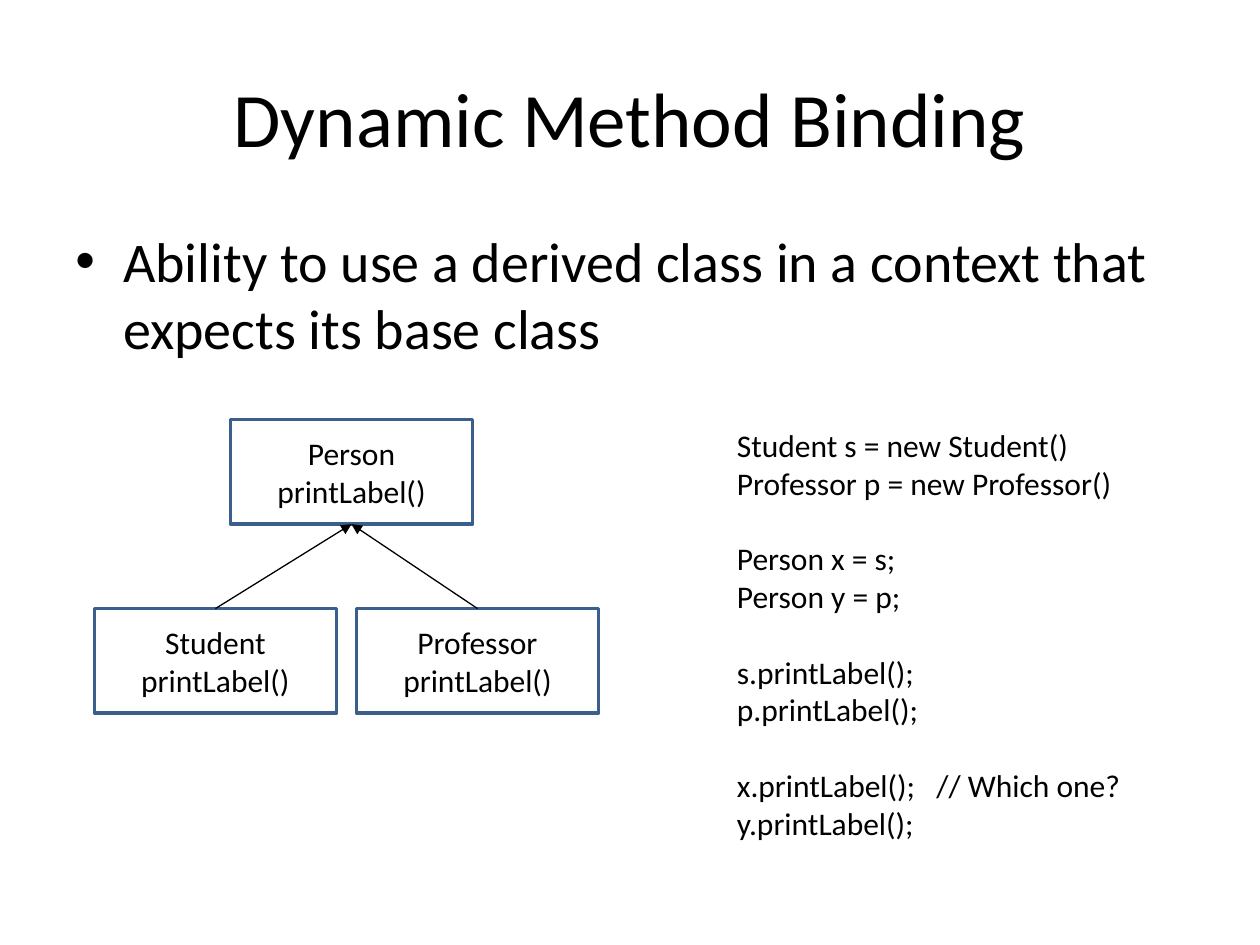
from lxml import etree
from pptx import Presentation
from pptx.dml.color import RGBColor
from pptx.enum.shapes import MSO_CONNECTOR, MSO_SHAPE
from pptx.enum.text import MSO_ANCHOR, PP_ALIGN
from pptx.oxml.ns import qn
from pptx.util import Inches, Pt

RECT, LINE = MSO_SHAPE.RECTANGLE, MSO_CONNECTOR.STRAIGHT
LEFT, CENTER = PP_ALIGN.LEFT, PP_ALIGN.CENTER
TOP, MIDDLE = MSO_ANCHOR.TOP, MSO_ANCHOR.MIDDLE

FONT, INK, EDGE = "Calibri", "000000", "3A5F8C"
TITLE = "Dynamic Method Binding"
POINT = "Ability to use a derived class in a context that expects its base class"
METHOD = "printLabel()"
BASE = "Person"
DERIVED = ["Student", "Professor"]
CODE = [
    ["Student s = new Student()", "Professor p = new Professor()"],
    ["Person x = s;", "Person y = p;"],
    ["s.printLabel();", "p.printLabel();"],
    ["x.printLabel();   // Which one?", "y.printLabel();"],
]

WIDE, HIGH = 10, 7.5
MARGIN = 0.05 * WIDE
BOX_W, BOX_H = 1.92, 0.83
TREE_X, STEP_X = 0.75, 2.08
BASE_Y, STEP_Y = 3.33, 1.5
CODE_X = 5.75
LINE_GAP = 21.6


def color(text):
    return RGBColor.from_string(text)


def write(shape, lines, size, align=LEFT, anchor=TOP, wrap=True):
    frame = shape.text_frame
    frame.word_wrap = wrap
    frame.vertical_anchor = anchor
    frame.text = "\n".join(lines)
    for para in frame.paragraphs:
        para.alignment = align
        para.font.name = FONT
        para.font.size = Pt(size)
        para.font.color.rgb = color(INK)
    return frame.paragraphs


def add_text(slide, area, lines, size, **style):
    box = slide.shapes.add_textbox(*map(Inches, area))
    return write(box, lines, size, **style)


def add_class(slide, name, x, y):
    box = slide.shapes.add_shape(RECT, *map(Inches, (x, y, BOX_W, BOX_H)))
    box.shadow.inherit = False
    box.fill.background()
    box.line.color.rgb = color(EDGE)
    box.line.width = Pt(2)
    write(box, [name, METHOD], 18, align=CENTER, anchor=MIDDLE)
    return box


def add_arrow(slide, child, parent):
    arrow = slide.shapes.add_connector(LINE, 0, 0, 0, 0)
    arrow.begin_connect(child, 0)
    arrow.end_connect(parent, 2)
    arrow.line.color.rgb = color(INK)
    arrow.line.width = Pt(0.75)
    etree.SubElement(arrow.line._get_or_add_ln(), qn("a:tailEnd"), type="triangle")
    etree.SubElement(arrow._element.spPr, qn("a:effectLst"))


def add_bullet(para, indent):
    para.space_before = Pt(6.4)
    props = para._p.get_or_add_pPr()
    props.set("marL", str(Inches(indent)))
    props.set("indent", str(-Inches(indent)))
    mark = etree.Element(qn("a:buChar"), char="•")
    props.find(qn("a:defRPr")).addprevious(mark)
    font = etree.Element(qn("a:buFont"), typeface="Arial")
    mark.addprevious(font)


def main():
    deck = Presentation()
    deck.slide_width, deck.slide_height = Inches(WIDE), Inches(HIGH)
    slide = deck.slides.add_slide(deck.slide_layouts[6])

    span = WIDE - 2 * MARGIN
    add_text(slide, (MARGIN, 0.3, span, 1.25), [TITLE], 44,
             align=CENTER, anchor=MIDDLE)
    point = add_text(slide, (MARGIN, 1.75, span, 1.42), [POINT], 32)
    add_bullet(point[0], 0.38)

    base = add_class(slide, BASE, TREE_X + 1.08, BASE_Y)
    kids = [add_class(slide, name, TREE_X + col * STEP_X, BASE_Y + STEP_Y)
            for col, name in enumerate(DERIVED)]
    for kid in kids:
        add_arrow(slide, kid, base)

    lines = [line for group in CODE for line in group]
    paras = add_text(slide, (CODE_X, BASE_Y, 3.29, 3.43), lines, 18, wrap=False)
    for para in paras[2::2]:
        para.space_before = Pt(LINE_GAP)

    deck.save("out.pptx")


if __name__ == "__main__":
    main()
